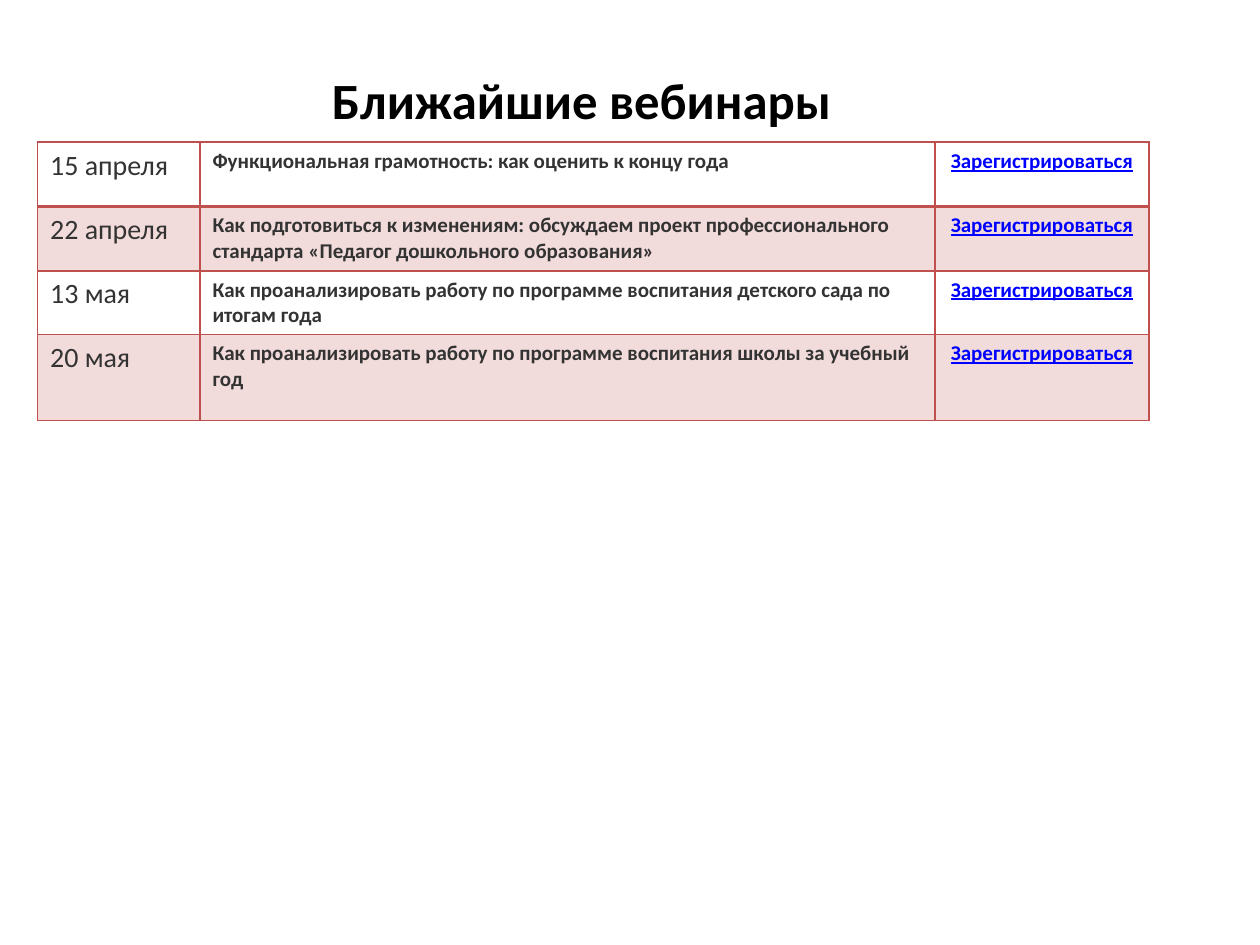
from lxml import etree
from pptx import Presentation
from pptx.dml import color
from pptx.enum import text
from pptx.oxml import ns
from pptx.util import Pt

RED, PINK, GREY, BLUE = "C0504D", "F2DCDB", "333333", "0000FF"
EVENTS = [
    ("15 апреля", "Функциональная грамотность: как оценить к концу года"),
    ("22 апреля", "Как подготовиться к изменениям: обсуждаем проект "
                  "профессионального стандарта «Педагог дошкольного образования»"),
    ("13 мая", "Как проанализировать работу по программе воспитания "
               "детского сада по итогам года"),
    ("20 мая", "Как проанализировать работу по программе воспитания "
               "школы за учебный год"),
]
SIGN = "Зарегистрироваться"


def rgb(code):
    """Turn a hex string into a colour."""
    return color.RGBColor.from_string(code)


def style(par, size, ink, bold=False, line=False, align=text.PP_ALIGN.LEFT):
    """Format a paragraph and its runs."""
    par.alignment = align
    for run in par.runs:
        font = run.font
        font.name, font.size = "Calibri", Pt(size)
        font.bold, font.underline = bold, line
        font.color.rgb = rgb(ink)


def border(cell, side, width):
    """Draw one side of a cell."""
    props = cell._tc.get_or_add_tcPr()
    edge = etree.SubElement(props, ns.qn(f"a:ln{side}"), w=str(Pt(width)))
    fill = etree.SubElement(edge, ns.qn("a:solidFill"))
    etree.SubElement(fill, ns.qn("a:srgbClr"), val=RED)


def title(slide, left, top, width, height):
    """Place and format the slide title."""
    head = slide.shapes.title
    head.left, head.top, head.width, head.height = map(Pt, (left, top, width, height))
    frame = head.text_frame
    frame.text = "Ближайшие вебинары"
    frame.vertical_anchor = text.MSO_ANCHOR.MIDDLE
    frame.auto_size = text.MSO_AUTO_SIZE.NONE
    style(frame.paragraphs[0], 29, "000000", True, align=text.PP_ALIGN.CENTER)


def schedule(slide, left, top, widths, heights):
    """Build the table of webinars."""
    box = map(Pt, (left, top, sum(widths), sum(heights)))
    grid = slide.shapes.add_table(len(EVENTS), len(widths), *box).table
    grid.first_row = grid.horz_banding = False
    for col, width in zip(grid.columns, widths):
        col.width = Pt(width)
    looks = [
        dict(size=16, ink=GREY),
        dict(size=12, ink=GREY, bold=True),
        dict(size=12, ink=BLUE, bold=True, line=True, align=text.PP_ALIGN.CENTER),
    ]
    for i, (event, height) in enumerate(zip(EVENTS, heights)):
        grid.rows[i].height = Pt(height)
        for j, (words, look) in enumerate(zip((*event, SIGN), looks)):
            cell = grid.cell(i, j)
            cell.text_frame.text = words
            style(cell.text_frame.paragraphs[0], **look)
            for side in "LRTB":
                thick = (i, side) in ((0, "B"), (1, "T"))
                border(cell, side, 2 if thick else 1)
            if i % 2:
                cell.fill.solid()
                cell.fill.fore_color.rgb = rgb(PINK)
            else:
                cell.fill.background()


def main():
    """Create the deck and save it."""
    deck = Presentation()
    deck.slide_width, deck.slide_height = Pt(720), Pt(540)
    slide = deck.slides.add_slide(deck.slide_layouts[5])
    title(slide, 8.5, 35.5, 648, 42.5)
    schedule(slide, 21.5, 81.2, (92.8, 420, 122.4), (36.6, 37, 36.2, 49))
    deck.save("out.pptx")


if __name__ == "__main__":
    main()
